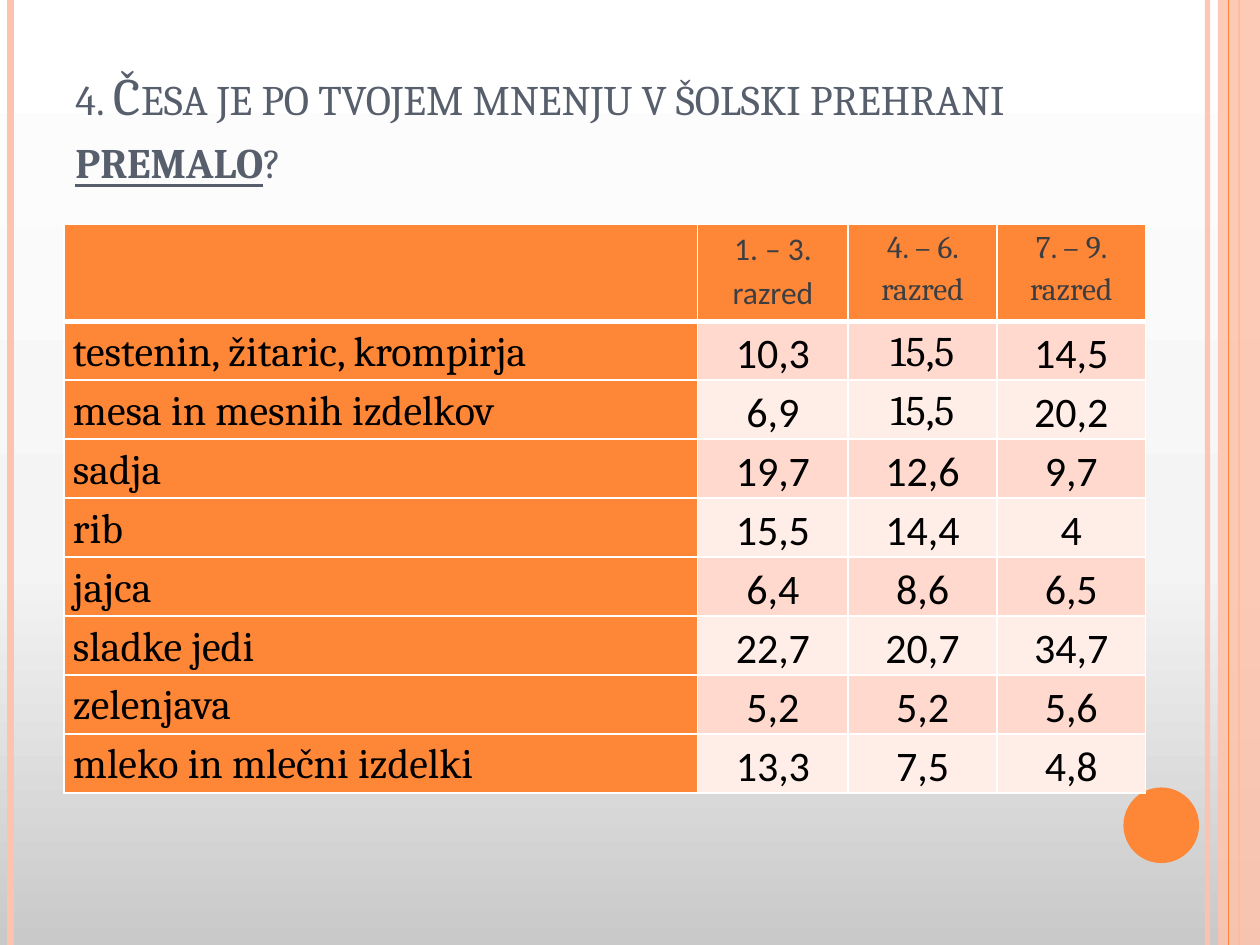
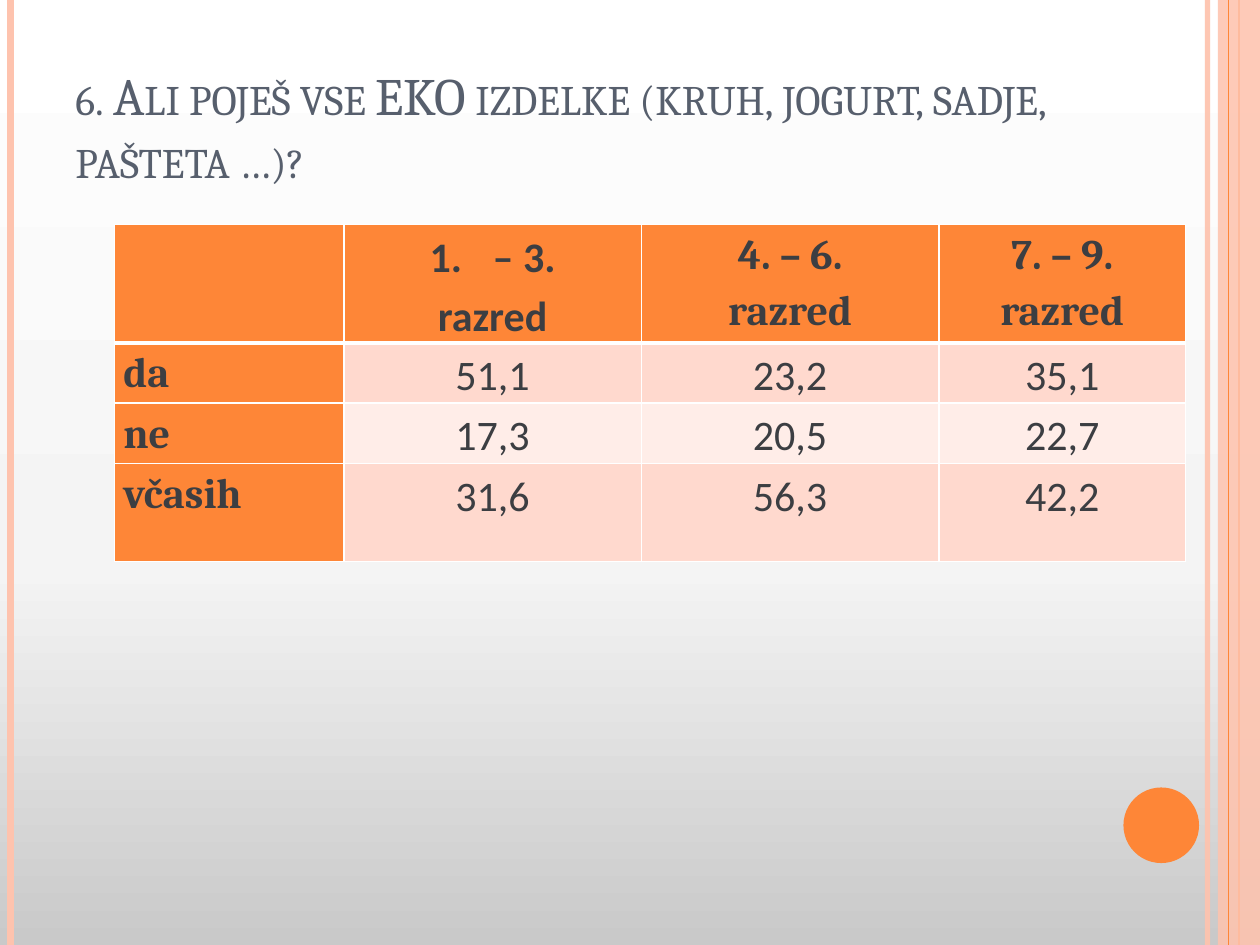
from copy import deepcopy
from lxml import etree
from pptx import Presentation
from pptx.dml.color import RGBColor
from pptx.enum import shapes, text
from pptx.oxml import ns
from pptx.util import Pt

ORANGE = RGBColor(0xFE, 0x86, 0x37)
PEACH = RGBColor(0xFE, 0xC3, 0xAE)
BAND_DARK = RGBColor(0xFF, 0xD9, 0xCE)
BAND_LIGHT = RGBColor(0xFF, 0xED, 0xE8)
SLATE = RGBColor(0x57, 0x5F, 0x6D)
CHARCOAL = RGBColor(0x3C, 0x3E, 0x42)
BLACK = RGBColor(0, 0, 0)
WHITE = RGBColor(0xFF, 0xFF, 0xFF)
BACKGROUND = [(0, RGBColor(0xC9, 0xC9, 0xC9)), (0.4, RGBColor(0xF4, 0xF4, 0xF4)), (1, WHITE)]
SERIF, SANS = "Cambria", "Calibri"
WIDTH, HEIGHT = 720, 540
SIDE_LINES = [(690, PEACH, 3, 93), (6, PEACH, 4.5, 100), (708, ORANGE, 1.5, 100)]
INNER_LINE = (702, ORANGE, 0.75, 100)


def add(parent, tag, **attrs):
    return etree.SubElement(parent, ns.qn(tag), {k: str(v) for k, v in attrs.items()})


def add_side_line(s, x, color, width, alpha):
    line = s.shapes.add_connector(shapes.MSO_CONNECTOR.STRAIGHT, Pt(x), 0, Pt(x), Pt(HEIGHT))
    line.line.color.rgb = color
    line.line.width = Pt(width)
    add(line.line.fill._xPr.find(".//" + ns.qn("a:srgbClr")), "a:alpha", val=alpha * 1000)
    add(line._element.spPr, "a:effectLst")


SLIDES = [
    dict(
        title=[("4. Česa je po tvojem mnenju v šolski prehrani ", False), ("premalo", True), ("?", False)],
        left=36.7, cols=[362, 86, 85, 85], heights=[55.2] + [33.7] * 8,
        head_size=18, bold=False, body_color=BLACK, serif_cells=[(1, 2), (2, 2)],
        rows=[
            ["", "1. – 3. razred", "4. – 6. razred", "7. – 9. razred"],
            ["testenin, žitaric, krompirja", "10,3", "15,5", "14,5"],
            ["mesa in mesnih izdelkov", "6,9", "15,5", "20,2"],
            ["sadja", "19,7", "12,6", "9,7"],
            ["rib", "15,5", "14,4", "4"],
            ["jajca", "6,4", "8,6", "6,5"],
            ["sladke jedi", "22,7", "20,7", "34,7"],
            ["zelenjava", "5,2", "5,2", "5,6"],
            ["mleko in mlečni izdelki", "13,3", "7,5", "4,8"],
        ],
    ),
    dict(
        title=[("6. Ali poješ vse EKO izdelke (kruh, jogurt, sadje, pašteta …)?", False)],
        left=65.5, cols=[131, 170, 170, 141], heights=[67.5, 34.5, 34.5, 56],
        head_size=24, bold=True, body_color=CHARCOAL, serif_cells=[],
        rows=[
            ["", "– 3.\nrazred", "4. – 6.\nrazred", "7. – 9. razred"],
            ["da", "51,1", "23,2", "35,1"],
            ["ne", "17,3", "20,5", "22,7"],
            ["včasih", "31,6", "56,3", "42,2"],
        ],
    ),
]

prs = Presentation()
prs.slide_width, prs.slide_height = Pt(WIDTH), Pt(HEIGHT)

for data in SLIDES:
    s = prs.slides.add_slide(prs.slide_layouts[6])
    fill = s.background.fill
    fill.gradient()
    fill.gradient_angle = 90
    first = fill.gradient_stops[0]._gs
    first.getparent().append(deepcopy(first))
    for stop, (position, color) in zip(fill.gradient_stops, BACKGROUND):
        stop.position = position
        stop.color.rgb = color

    for side_line in SIDE_LINES:
        add_side_line(s, *side_line)
    band = s.shapes.add_shape(shapes.MSO_SHAPE.RECTANGLE, Pt(696), 0, Pt(24), Pt(HEIGHT))
    dot = s.shapes.add_shape(shapes.MSO_SHAPE.OVAL, Pt(642), Pt(450), Pt(43.2), Pt(43.2))
    for sp, color in [(band, PEACH), (dot, ORANGE)]:
        sp.shadow.inherit = False
        sp.fill.solid()
        sp.fill.fore_color.rgb = color
        sp.line.fill.background()
    add(band._element.spPr.find(".//" + ns.qn("a:srgbClr")), "a:alpha", val=87000)
    add_side_line(s, *INNER_LINE)

    tf = s.shapes.add_textbox(Pt(36), Pt(21.6), Pt(588), Pt(90)).text_frame
    tf.word_wrap = True
    tf.vertical_anchor = text.MSO_ANCHOR.BOTTOM
    p = tf.paragraphs[0]
    for words, stressed in data["title"]:
        r = p.add_run()
        r.text = words
        r.font.name, r.font.size = SERIF, Pt(30)
        r.font.color.rgb = SLATE
        r.font.bold = r.font.underline = stressed
        r._r.get_or_add_rPr().set("cap", "small")

    rows, cols, heights = data["rows"], data["cols"], data["heights"]
    table = s.shapes.add_table(len(rows), len(cols), Pt(data["left"]), Pt(128.4),
                               Pt(sum(cols)), Pt(sum(heights))).table
    for column, width in zip(table.columns, cols):
        column.width = Pt(width)
    for i, row in enumerate(rows):
        table.rows[i].height = Pt(heights[i])
        for j, words in enumerate(row):
            cell = table.cell(i, j)
            cell.margin_left = cell.margin_right = Pt(5)
            cell.margin_top = cell.margin_bottom = 0
            cell.text = words
            is_head = i == 0
            is_label = is_head or j == 0
            is_serif = j == 0 or is_head and j > 1 or (i, j) in data["serif_cells"]
            for p in cell.text_frame.paragraphs:
                p.line_spacing = 1.15
                p.alignment = text.PP_ALIGN.CENTER if j else text.PP_ALIGN.LEFT
                p.font.name = SERIF if is_serif else SANS
                p.font.size = Pt(data["head_size"] if is_head else 24)
                p.font.bold = data["bold"] and is_label
                p.font.color.rgb = CHARCOAL if is_head else data["body_color"]
                for r in p.runs:
                    r.font.name, r.font.size, r.font.bold = p.font.name, p.font.size, p.font.bold
                    r.font.color.rgb = p.font.color.rgb
            cell.fill.solid()
            cell.fill.fore_color.rgb = ORANGE if is_label else BAND_DARK if i % 2 else BAND_LIGHT
            tcPr = cell._tc.get_or_add_tcPr()
            for k, side in enumerate("LRTB"):
                thick = (i, side) in [(0, "B"), (1, "T")]
                ln = add(tcPr, "a:ln" + side, w=Pt(3 if thick else 1))
                add(add(ln, "a:solidFill"), "a:srgbClr", val=WHITE)
                tcPr.insert(k, ln)

    if data["bold"]:
        pPr = table.cell(0, 1).text_frame.paragraphs[0]._p.get_or_add_pPr()
        pPr.set("marL", str(Pt(36)))
        pPr.set("indent", str(Pt(-36)))
        numbering = add(pPr, "a:buAutoNum", type="arabicPeriod")
        pPr.find(ns.qn("a:lnSpc")).addnext(numbering)

prs.save("out.pptx")
